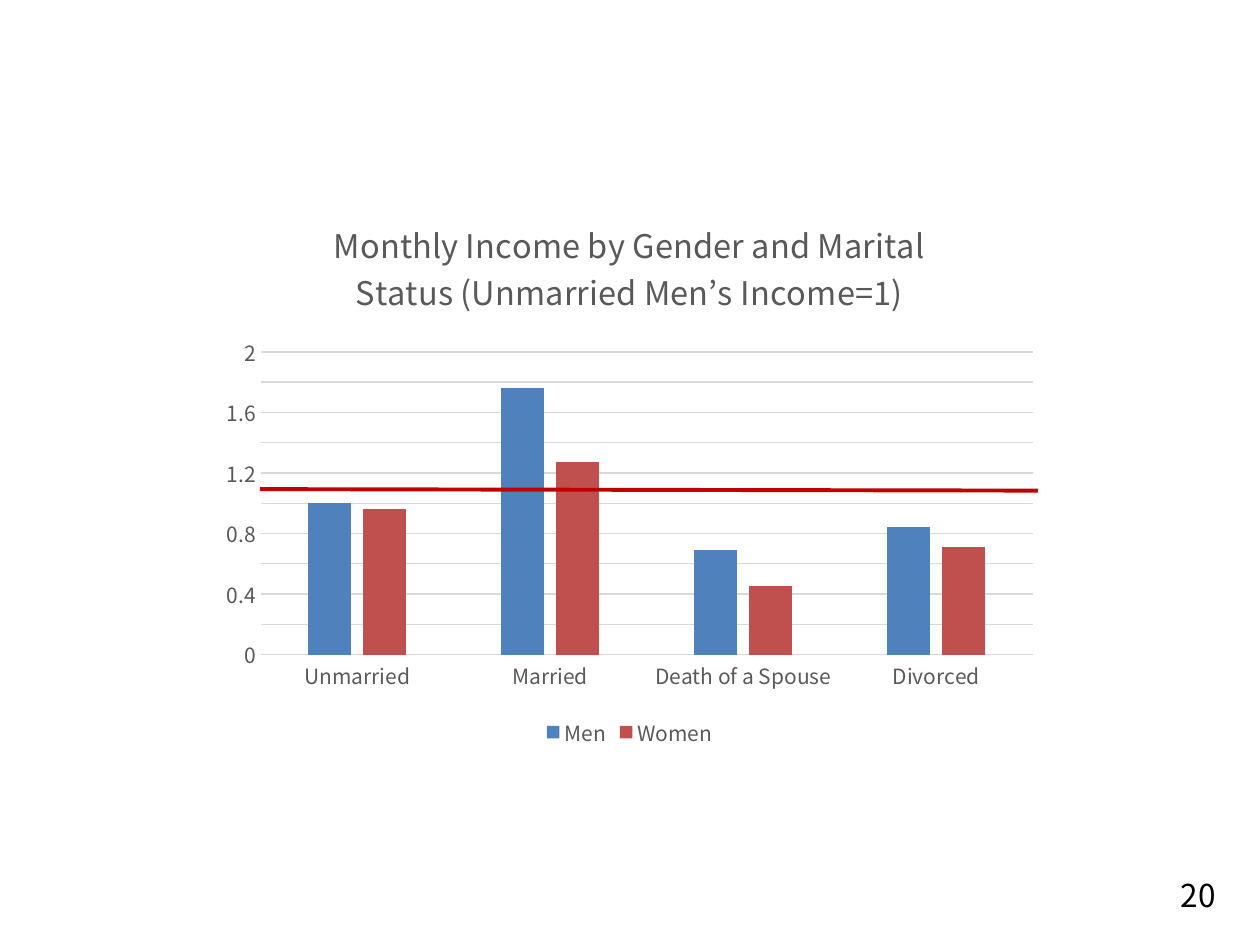
import pptx
import pptx.chart.data
import pptx.dml.color
import pptx.enum.chart
import pptx.enum.shapes
import pptx.util
from pptx.util import Cm, Pt
from lxml import etree

DRAWING_NS = "http://schemas.openxmlformats.org/drawingml/2006/main"


def color(hex_code):
    return pptx.dml.color.RGBColor.from_string(hex_code)


class IncomeSlide:
    """Holds the style and the current slide."""

    font_name = "Noto Sans CJK KR"
    gray, grid, black = "595959", "D9D9D9", "000000"

    def __init__(self, presentation):
        self.slide = presentation.slides.add_slide(presentation.slide_layouts[6])

    def set_font(self, font, size, hex_code):
        font.name = self.font_name
        font.size = Pt(size)
        font.bold = False
        font.color.rgb = color(hex_code)

    def set_line(self, line, hex_code, width):
        line.color.rgb = color(hex_code)
        line.width = Pt(width)

    def column_chart(self, title, categories, series, left, top, width, height):
        data = pptx.chart.data.CategoryChartData()
        data.categories = categories
        for name, (values, _) in series.items():
            data.add_series(name, values)
        chart = self.slide.shapes.add_chart(
            pptx.enum.chart.XL_CHART_TYPE.COLUMN_CLUSTERED,
            Cm(left), Cm(top), Cm(width), Cm(height), data).chart
        self.set_font(chart.font, 10, self.black)

        # Title
        chart.has_title = True
        chart.chart_title.include_in_layout = False
        chart.chart_title.text_frame.text = title
        self.set_font(chart.chart_title.text_frame.paragraphs[0].font, 18.6, self.gray)

        # Columns
        plot = chart.plots[0]
        plot.gap_width, plot.overlap = 219, -27
        plot.vary_by_categories = False
        for columns, (_, fill) in zip(plot.series, series.values()):
            columns.format.fill.solid()
            columns.format.fill.fore_color.rgb = color(fill)
            columns.invert_if_negative = False

        # Axes
        for axis in (chart.category_axis, chart.value_axis):
            axis.major_tick_mark = pptx.enum.chart.XL_TICK_MARK.NONE
            axis.minor_tick_mark = pptx.enum.chart.XL_TICK_MARK.NONE
            self.set_font(axis.tick_labels.font, 12, self.gray)
        self.set_line(chart.category_axis.format.line, self.grid, 0.75)
        income_axis = chart.value_axis
        income_axis.minimum_scale, income_axis.maximum_scale = 0, 2
        income_axis.major_unit = 0.2
        income_axis.format.line.fill.background()
        self.set_line(income_axis.major_gridlines.format.line, self.grid, 0.75)

        # Legend
        chart.has_legend = True
        chart.legend.position = pptx.enum.chart.XL_LEGEND_POSITION.BOTTOM
        chart.legend.include_in_layout = False
        self.set_font(chart.legend.font, 12, self.gray)

    def line(self, x1, y1, x2, y2, hex_code, width):
        connector = self.slide.shapes.add_connector(
            pptx.enum.shapes.MSO_CONNECTOR.STRAIGHT, Cm(x1), Cm(y1), Cm(x2), Cm(y2))
        self.set_line(connector.line, hex_code, width)
        etree.SubElement(connector._element.spPr, f"{{{DRAWING_NS}}}effectLst")

    def text(self, wording, left, top, width, height, size):
        frame = self.slide.shapes.add_textbox(
            Cm(left), Cm(top), Cm(width), Cm(height)).text_frame
        frame.word_wrap = True
        frame.text = wording
        self.set_font(frame.paragraphs[0].font, size, self.black)


def main():
    presentation = pptx.Presentation()
    presentation.slide_width, presentation.slide_height = Cm(25.4), Cm(19.05)
    income = IncomeSlide(presentation)

    # Income chart
    income.column_chart(
        "Monthly Income by Gender and Marital Status (Unmarried Men’s Income=1)",
        ["Unmarried", "Married", "Death of a Spouse", "Divorced"],
        {"Men": ([1, 1.76, 0.69, 0.84], "4F81BD"),
         "Women": ([0.96, 1.27, 0.45, 0.71], "C0504D")},
        4.23, 3.89, 16.93, 11.29)

    # Reference level
    income.line(5.24, 9.86, 20.92, 9.89, "C00000", 2.25)

    # Page number
    income.text("20", 23.55, 17.53, 1.5, 1.02, 18)

    presentation.save("out.pptx")


if __name__ == "__main__":
    main()
